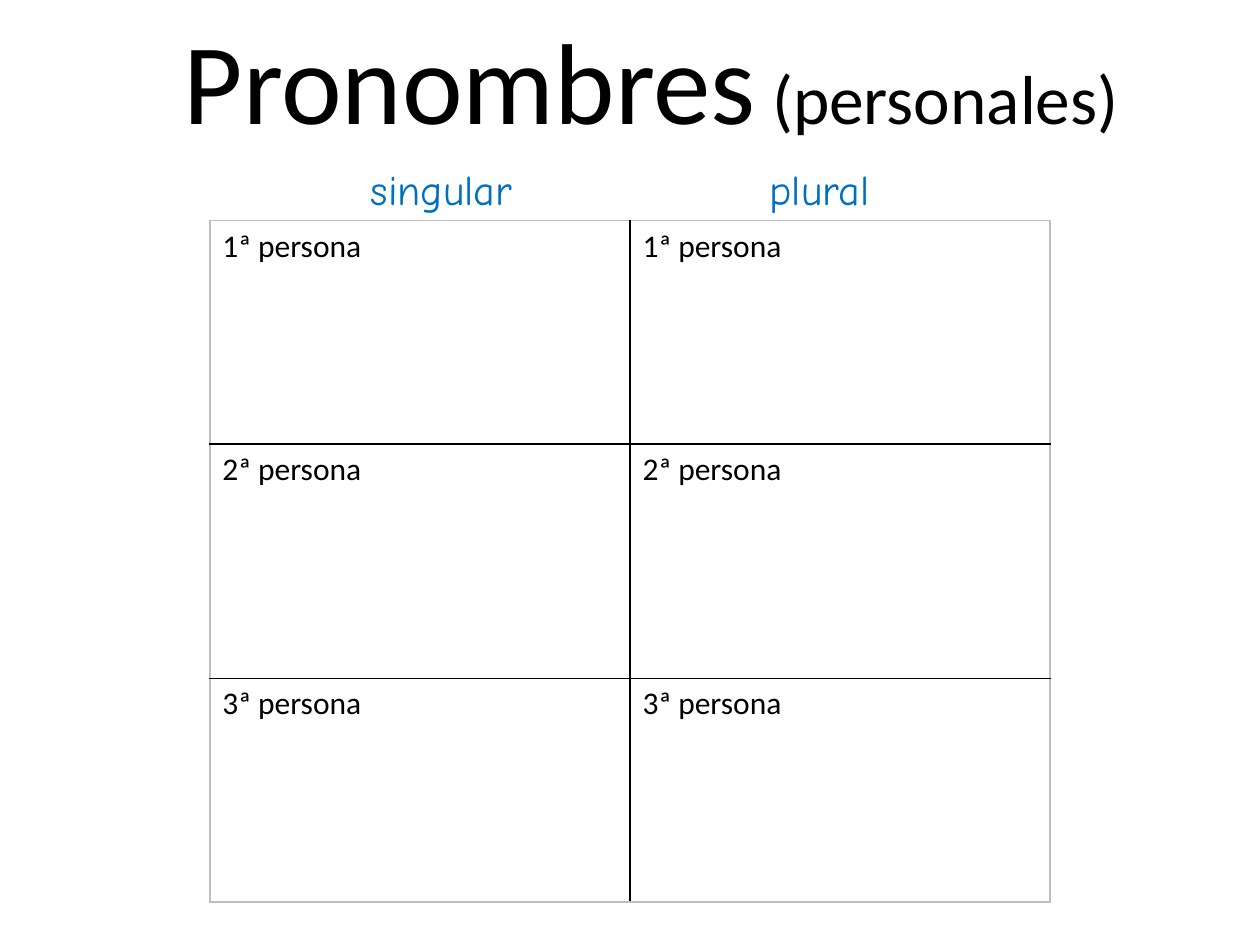
from dataclasses import dataclass

from lxml.etree import SubElement
from pptx import Presentation
from pptx.dml.color import RGBColor
from pptx.enum.text import MSO_ANCHOR as Anchor, MSO_AUTO_SIZE as AutoSize, PP_ALIGN as Align
from pptx.oxml.ns import qn
from pptx.util import Cm, Pt

BLACK, GREY, BLUE = "000000", "BFBFBF", "0070C0"
PERSONS = ["1ª persona", "2ª persona", "3ª persona"]
ROW_HEIGHTS = [4.5, 4.73, 4.5]
COL_WIDTH = 8.47
TABLE_LEFT, TABLE_TOP = 4.23, 4.45


@dataclass
class Heading:
    text: str
    left: float


HEADINGS = [Heading("singular", 6.15), Heading("plural", 13.77)]


def rgb(color: str) -> RGBColor:
    return RGBColor.from_string(color)


def add_run(p, text: str, size: float, font: str = "Calibri", color: str = BLACK) -> None:
    r = p.add_run()
    r.text = text
    for name, value in {"size": Pt(size), "name": font, "bold": False}.items():
        setattr(r.font, name, value)
    r.font.color.rgb = rgb(color)


def set_frame(tf, **formats) -> None:
    for name, value in {"word_wrap": True, **formats}.items():
        setattr(tf, name, value)


def add_heading(slide, heading: Heading) -> None:
    sp = slide.shapes.add_textbox(Cm(heading.left), Cm(3.18), Cm(5.5), Cm(1.27))
    set_frame(sp.text_frame, auto_size=AutoSize.SHAPE_TO_FIT_TEXT)
    p = sp.text_frame.paragraphs[0]
    p.alignment = Align.CENTER
    add_run(p, heading.text, 24, "Comic Neue", BLUE)


def set_borders(cell, colors: dict[str, str]) -> None:
    props = cell._tc.get_or_add_tcPr()
    for side, color in colors.items():
        line = SubElement(props, qn(f"a:ln{side}"), w=str(Pt(1)))
        fill = SubElement(line, qn("a:solidFill"))
        SubElement(fill, qn("a:srgbClr"), val=color)


def add_person_table(slide) -> None:
    rows, cols = len(PERSONS), len(HEADINGS)
    table = slide.shapes.add_table(
        rows, cols, Cm(TABLE_LEFT), Cm(TABLE_TOP),
        Cm(COL_WIDTH * cols), Cm(sum(ROW_HEIGHTS))).table
    table.first_row = table.horz_banding = False
    for col in table.columns:
        col.width = Cm(COL_WIDTH)
    for i, (person, height) in enumerate(zip(PERSONS, ROW_HEIGHTS)):
        table.rows[i].height = Cm(height)
        for j in range(cols):
            cell = table.cell(i, j)
            # Grey outer frame, black inner lines
            outer = {"L": j == 0, "R": j == cols - 1, "T": i == 0, "B": i == rows - 1}
            set_borders(cell, {side: GREY if edge else BLACK for side, edge in outer.items()})
            cell.fill.background()
            add_run(cell.text_frame.paragraphs[0], person, 18)


def main() -> None:
    prs = Presentation()
    prs.slide_width, prs.slide_height = Cm(25.4), Cm(19.05)
    slide = prs.slides.add_slide(prs.slide_layouts[5])

    # Title
    title = slide.shapes.title
    box = {"left": 1.7, "top": 0, "width": 22.86, "height": 3.18}
    for name, value in box.items():
        setattr(title, name, Cm(value))
    set_frame(title.text_frame, auto_size=AutoSize.NONE, vertical_anchor=Anchor.MIDDLE)
    p = title.text_frame.paragraphs[0]
    p.alignment = Align.CENTER
    add_run(p, "Pronombres", 65.7)
    add_run(p, " (personales)", 39.6)

    # Table with its column headings
    add_person_table(slide)
    for heading in HEADINGS:
        add_heading(slide, heading)

    prs.save("out.pptx")


if __name__ == "__main__":
    main()
